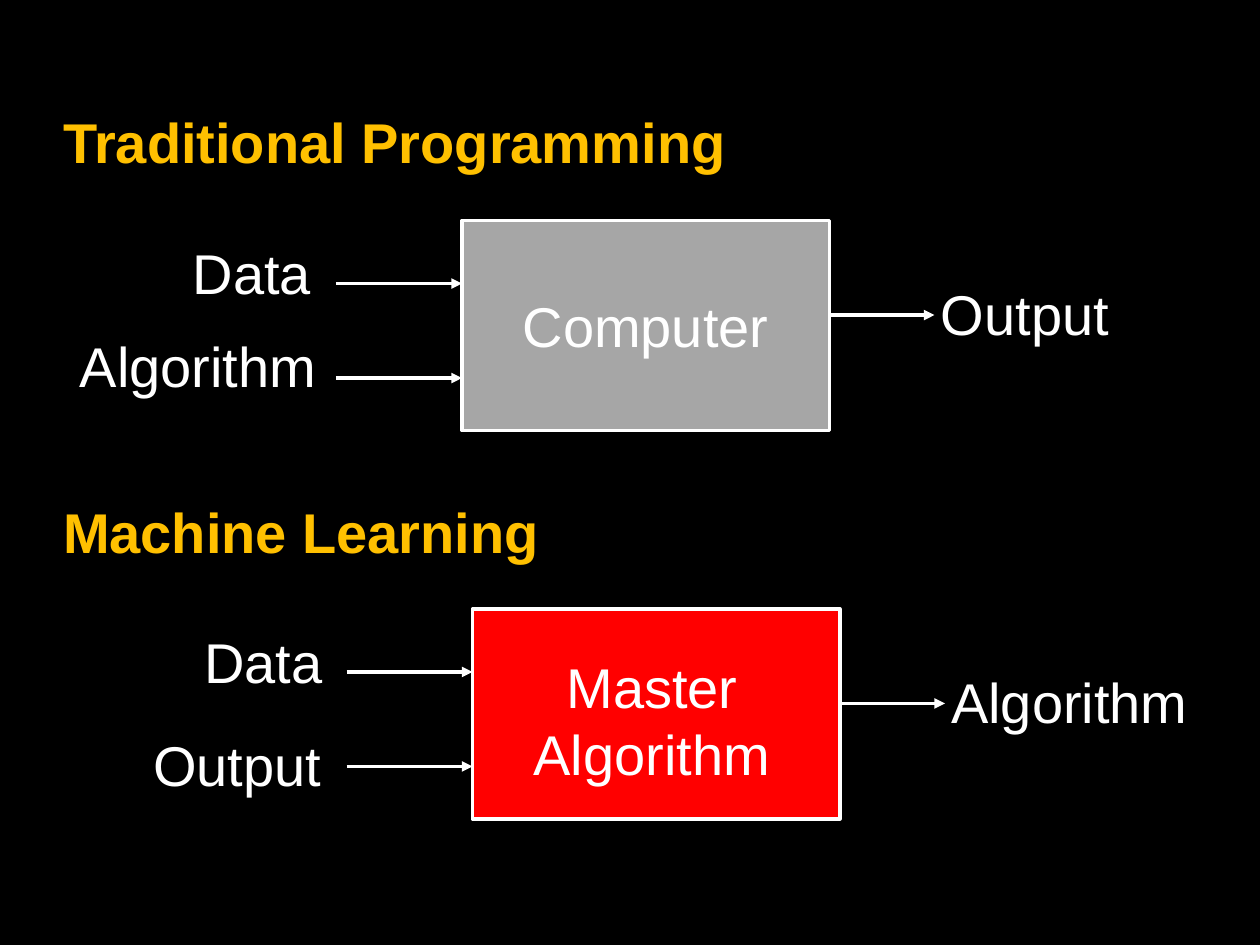
from pptx import Presentation
from pptx.dml.color import RGBColor
from pptx.enum.shapes import MSO_CONNECTOR, MSO_SHAPE
from pptx.enum.text import MSO_ANCHOR, PP_ALIGN
from pptx.oxml.ns import qn
from pptx.util import Pt
from lxml import etree

LINE, RECT = MSO_CONNECTOR.STRAIGHT, MSO_SHAPE.RECTANGLE
TOP, MIDDLE = MSO_ANCHOR.TOP, MSO_ANCHOR.MIDDLE
LEFT, CENTER = PP_ALIGN.LEFT, PP_ALIGN.CENTER

COLORS = {"back": "000000", "text": "FFFFFF", "head": "FFC000",
          "gray": "A6A6A6", "red": "FF0000"}
FONT, SIZE = "Arial", 32

HEADS = ["Traditional Programming", "Machine Learning"]
HEAD_GAP = 188

# Labels are (text, dx, dy, width), measured from the corner of the box.
# Nudge is how far the box text sits left of and below the centre.
FLOWS = [
    {"at": (264, 126), "fill": "gray", "box": ["Computer"], "nudge": (0, 0),
     "labels": [("Data", -157.5, 7, 76), ("Algorithm", -222, 60, 143),
                ("Output", 270, 30, 104)]},
    {"at": (270, 348), "fill": "red", "box": ["Master", "Algorithm"],
     "nudge": (2.4, 3),
     "labels": [("Data", -157, 7, 76), ("Output", -186, 66, 104),
                ("Algorithm", 270, 30, 144)]},
]
BOX_W, BOX_H, LABEL_H = 210, 120, 43
# Arrows are (start dx, end dx, dy).
ARROWS = [(-72, 0, 36), (-72, 0, 90), (BOX_W, BOX_W + 60, 54)]


def color(name):
    return RGBColor.from_string(COLORS[name])


def write(frame, lines, tone="text", bold=False, align=LEFT, anchor=TOP,
          inset=(0, 0, 0, 0)):
    """Fill a text frame, one paragraph a line; inset is left, top, right, bottom."""
    frame.word_wrap = True
    frame.vertical_anchor = anchor
    (frame.margin_left, frame.margin_top,
     frame.margin_right, frame.margin_bottom) = map(Pt, inset)
    for i, line in enumerate(lines):
        para = frame.add_paragraph() if i else frame.paragraphs[0]
        para.alignment = align
        run = para.add_run()
        run.text = line
        font = run.font
        font.name, font.size, font.bold = FONT, Pt(SIZE), bold
        font.color.rgb = color(tone)


def add_box(slide, x, y, flow):
    box = slide.shapes.add_shape(RECT, Pt(x), Pt(y), Pt(BOX_W), Pt(BOX_H))
    box.shadow.inherit = False
    box.fill.solid()
    box.fill.fore_color.rgb = color(flow["fill"])
    box.line.color.rgb = color("text")
    box.line.width = Pt(2)
    left, down = flow["nudge"]
    write(box.text_frame, flow["box"], align=CENTER, anchor=MIDDLE,
          inset=(0, 2 * down, 2 * left, 0))


def add_arrow(slide, x1, x2, y):
    arrow = slide.shapes.add_connector(LINE, Pt(x1), Pt(y), Pt(x2), Pt(y))
    arrow.line.color.rgb = color("text")
    arrow.line.width = Pt(2)
    etree.SubElement(arrow.line._get_or_add_ln(), qn("a:tailEnd"), type="triangle")
    etree.SubElement(arrow._element.spPr, qn("a:effectLst"))


def add_flow(slide, flow):
    x, y = flow["at"]
    add_box(slide, x, y, flow)
    for start, end, dy in ARROWS:
        add_arrow(slide, x + start, x + end, y + dy)
    for text, dx, dy, width in flow["labels"]:
        label = slide.shapes.add_textbox(Pt(x + dx), Pt(y + dy), Pt(width), Pt(LABEL_H))
        write(label.text_frame, [text], inset=(3.6,) * 4)


def add_heads(slide):
    title = slide.shapes.title
    title.left, title.top, title.width, title.height = map(Pt, (36, 66, 540, 258))
    write(title.text_frame, HEADS, "head", bold=True)
    for i, para in enumerate(title.text_frame.paragraphs):
        para.line_spacing = 0.9
        para.space_before = Pt(HEAD_GAP if i else 0)


def main():
    deck = Presentation()
    deck.slide_width, deck.slide_height = Pt(720), Pt(540)
    slide = deck.slides.add_slide(deck.slide_layouts[5])
    slide.background.fill.solid()
    slide.background.fill.fore_color.rgb = color("back")
    add_heads(slide)
    for flow in FLOWS:
        add_flow(slide, flow)
    deck.save("out.pptx")


if __name__ == "__main__":
    main()
